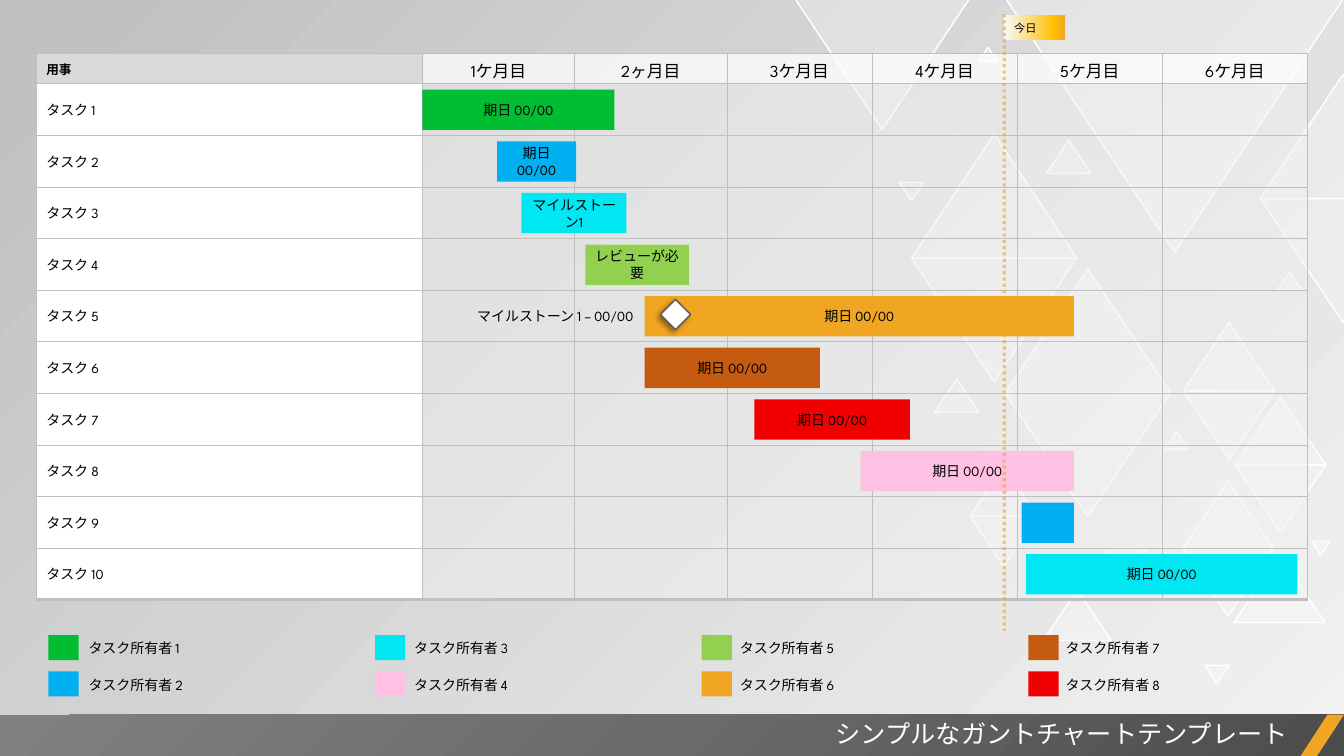
from pptx import Presentation
from pptx.dml.color import RGBColor
from pptx.enum.dml import MSO_LINE
from pptx.enum.shapes import MSO_CONNECTOR, MSO_SHAPE as Preset
from pptx.enum.text import MSO_ANCHOR as Anchor, PP_ALIGN as Align
from pptx.oxml import parse_xml
from pptx.oxml.ns import nsdecls, qn
from pptx.util import Inches, Pt

WIDTH, HEIGHT = 13.33, 7.5
FONT = "League Spartan"
GRID = "BFBFBF"
TABLE_LEFT, TABLE_TOP = 0.36, 0.53
HEADER_HEIGHT, ROW_HEIGHT = 0.3, 0.512
COLUMNS = [3.83] + [1.51] * 2 + [1.44] * 4
HEADINGS = ["用事", "1ケ月目", "2ヶ月目", "3ケ月目", "4ケ月目", "5ケ月目", "6ケ月目"]
TASK_COUNT = 10
BAR_HEIGHT = 0.4
FOOTER_TOP = 7.09
DUE = "期日 00/00"

GREEN, BLUE, CYAN, PINK = "00BD32", "00B0F0", "00E7F2", "FFC0E3"
LIME, ORANGE, BROWN, RED = "92D050", "F0A622", "C55A11", "F10002"
OWNERS = [GREEN, BLUE, CYAN, PINK, LIME, ORANGE, BROWN, RED]

BARS = [
    (0, 1.26, GREEN, DUE),
    (0.49, 1.01, BLUE, DUE),
    (0.65, 1.34, CYAN, "マイルストーン1"),
    (1.07, 1.75, LIME, "レビューが必要"),
    (1.46, 4.39, ORANGE, DUE),
    (1.46, 2.64, BROWN, DUE),
    (2.19, 3.26, RED, DUE),
    (2.92, 4.39, PINK, DUE),
    (4.03, 4.39, BLUE, ""),
    (4.06, 5.93, CYAN, DUE),
]

UP, DOWN = 0, 180
TRIANGLES = [
    (9.04, 1.33, 1.64, UP), (9.04, 2.56, 1.64, DOWN),
    (9.97, 2.67, 1.64, UP), (9.97, 3.9, 1.64, DOWN),
    (9.97, -0.02, 3.36, DOWN),
    (12.24, 5.5, 0.9, UP), (11.73, 5.44, 0.9, DOWN),
    (11.73, 4.77, 0.9, UP), (11.74, 3.2, 0.9, UP),
    (11.74, 3.88, 0.9, DOWN), (12.25, 3.94, 0.9, UP),
    (12.25, 4.61, 0.9, DOWN), (10.35, 5.85, 0.67, UP),
    (9.62, 5.12, 0.67, DOWN), (9.62, 4.62, 0.67, UP),
    (12.5, 0.74, 1.64, UP), (12.5, 1.97, 1.64, DOWN),
    (10.94, 5.44, 0.44, DOWN), (9.27, 3.76, 0.44, UP),
    (11.55, 4.28, 0.24, UP), (11.95, 6.6, 0.24, DOWN),
    (8.92, 1.81, 0.24, DOWN), (12.67, 2.7, 0.24, UP),
    (9.71, 0.47, 0.18, UP), (13.01, 5.37, 0.18, DOWN),
    (10.38, 1.39, 0.44, UP), (7.88, -0.02, 1.74, DOWN),
]


def rgb(color):
    return RGBColor.from_string(color)


def color_xml(color, opacity=100):
    return f'<a:srgbClr {nsdecls("a")} val="{color}"><a:alpha val="{opacity * 1000}"/></a:srgbClr>'


def paint(fill, color, opacity=100):
    fill.solid()
    fill.fore_color.rgb = rgb(color)
    if opacity < 100:
        solid = fill._xPr.find(qn("a:solidFill"))
        solid.replace(solid[0], parse_xml(color_xml(color, opacity)))


def paint_gradient(fill, stops, direction):
    fill.gradient()
    old = fill._xPr.find(qn("a:gradFill"))
    stop_list = "".join(
        f'<a:gs pos="{position * 1000}">{color_xml(color, opacity)}</a:gs>'
        for position, color, opacity in stops)
    new = parse_xml(f'<a:gradFill {nsdecls("a")} rotWithShape="1">'
                    f'<a:gsLst>{stop_list}</a:gsLst>{direction}</a:gradFill>')
    old.getparent().replace(old, new)


def write(frame, text, size, color="000000", align=Align.LEFT, anchor=Anchor.MIDDLE, bold=False):
    frame.word_wrap = True
    frame.vertical_anchor = anchor
    paragraph = frame.paragraphs[0]
    paragraph.text = text
    paragraph.alignment = align
    paragraph.font.name = FONT
    paragraph.font.size = Pt(size)
    paragraph.font.bold = bold
    paragraph.font.color.rgb = rgb(color)


def add_preset(slide, preset, left, top, width, height, color, opacity=100, outline=None):
    shape = slide.shapes.add_shape(preset, Inches(left), Inches(top), Inches(width), Inches(height))
    shape.shadow.inherit = False
    paint(shape.fill, color, opacity)
    if outline:
        shape.line.color.rgb = rgb(outline)
        shape.line.width = Pt(1)
    else:
        shape.line.fill.background()
    return shape


def add_text(slide, left, top, width, height, text, size, **style):
    box = slide.shapes.add_textbox(Inches(left), Inches(top), Inches(width), Inches(height))
    write(box.text_frame, text, size, **style)


def month_x(month):
    whole = int(month)
    return TABLE_LEFT + sum(COLUMNS[:whole + 1]) + (month - whole) * COLUMNS[whole + 1]


def bar_top(row):
    return TABLE_TOP + HEADER_HEIGHT + 0.06 + row * ROW_HEIGHT


def add_backdrop(slide):
    paint_gradient(slide.background.fill, [(0, "F2F2F2", 40), (100, GRID, 100)],
                   '<a:lin ang="13500000" scaled="0"/>')
    for left, top, width, rotation in TRIANGLES:
        triangle = add_preset(slide, Preset.ISOSCELES_TRIANGLE, left, top, width, width * 0.75,
                              "FFFFFF", 30, "FFFFFF")
        triangle.rotation = rotation


def add_footer(slide):
    height = HEIGHT - FOOTER_TOP
    footer = add_preset(slide, Preset.RECTANGLE, 0, FOOTER_TOP, WIDTH, height, "6B6B6B")
    paint_gradient(footer.fill, [(0, "4C4C4C", 100), (50, "6B6B6B", 100), (100, "808080", 100)],
                   '<a:path path="circle"><a:fillToRect l="100000" t="100000"/></a:path>')
    accent = add_preset(slide, Preset.PARALLELOGRAM, 12.9, FOOTER_TOP, 0.43, height, ORANGE)
    accent.adjustments[0] = 0.65
    add_text(slide, 5.25, 7.08, 7.62, 0.4, "シンプルなガントチャートテンプレート", 18,
             color="FFFFFF", align=Align.RIGHT, anchor=Anchor.TOP)


def style_cell(cell, color, opacity, bottom_width):
    properties = cell._tc.get_or_add_tcPr()
    for side, width in (("L", 0.5), ("R", 0.5), ("T", 0.5), ("B", bottom_width)):
        properties.append(parse_xml(
            f'<a:ln{side} {nsdecls("a")} w="{Pt(width)}"><a:solidFill>{color_xml(GRID)}'
            f'</a:solidFill></a:ln{side}>'))
    paint(cell.fill, color, opacity)


def add_schedule(slide):
    frame = slide.shapes.add_table(TASK_COUNT + 1, len(COLUMNS), Inches(TABLE_LEFT), Inches(TABLE_TOP),
                                   Inches(sum(COLUMNS)), Inches(HEADER_HEIGHT + TASK_COUNT * ROW_HEIGHT))
    table = frame.table
    table.first_row = table.horz_banding = False
    for column, width in zip(table.columns, COLUMNS):
        column.width = Inches(width)
    for index, row in enumerate(table.rows):
        row.height = Inches(ROW_HEIGHT if index else HEADER_HEIGHT)
        bottom_width = 3 if index == TASK_COUNT else 0.5
        for position, cell in enumerate(row.cells):
            if position:
                color, opacity = ("F2F2F2", 50) if index else ("FFFFFF", 75)
            else:
                color, opacity = ("FFFFFF" if index else "D9D9D9"), 100
            style_cell(cell, color, opacity, bottom_width)
        if index:
            table.cell(index, 0).vertical_anchor = Anchor.MIDDLE
            write(table.cell(index, 0).text_frame, f"タスク {index}", 10)
    for position, heading in enumerate(HEADINGS):
        cell = table.cell(0, position)
        cell.vertical_anchor = Anchor.MIDDLE
        write(cell.text_frame, heading, 12 if position else 9, bold=position == 0,
              align=Align.CENTER if position else Align.LEFT)


def add_bars(slide):
    for row, (start, end, color, label) in enumerate(BARS):
        left = month_x(start)
        bar = add_preset(slide, Preset.RECTANGLE, left, bar_top(row), month_x(end) - left, BAR_HEIGHT, color)
        if label:
            write(bar.text_frame, label, 10, align=Align.CENTER)


def add_legend(slide):
    for index, color in enumerate(OWNERS):
        column, row = divmod(index, 2)
        top = 6.3 + row * 0.36
        add_preset(slide, Preset.RECTANGLE, 0.48 + column * 3.24, top, 0.3, 0.25, color)
        add_text(slide, 0.78 + column * 3.23, top, 2.4, 0.27, f"タスク所有者 {index + 1}", 10,
                 anchor=Anchor.TOP)


def add_today(slide):
    x = 9.96
    flag = add_preset(slide, Preset.RECTANGLE, x, 0.15, 0.6, 0.25, ORANGE)
    paint_gradient(flag.fill, [(0, "F7FAFD", 100), (83, "FFC000", 100), (100, ORANGE, 100)],
                   '<a:lin ang="0" scaled="0"/>')
    write(flag.text_frame, "今日", 8)
    marker = slide.shapes.add_connector(MSO_CONNECTOR.STRAIGHT, Inches(x), Inches(0.14), Inches(x), Inches(6.26))
    paint(marker.line.fill, ORANGE, 60)
    marker.line.width = Pt(2.25)
    marker.line.dash_style = MSO_LINE.ROUND_DOT
    marker._element.spPr.append(parse_xml(f'<a:effectLst {nsdecls("a")}/>'))


def add_milestone(slide):
    diamond = add_preset(slide, Preset.DIAMOND, 6.55, 2.97, 0.3, 0.3, "FFFFFF", outline="595959")
    diamond._element.spPr.find(qn("a:effectLst")).append(parse_xml(
        f'<a:outerShdw {nsdecls("a")} blurRad="{Pt(4)}" dist="{Pt(3)}" dir="8100000">'
        f'{color_xml("000000", 40)}</a:outerShdw>'))
    add_text(slide, 4.21, bar_top(4), 2.17, BAR_HEIGHT, "マイルストーン 1 – 00/00", 10, align=Align.RIGHT)


def main():
    presentation = Presentation()
    presentation.slide_width, presentation.slide_height = Inches(WIDTH), Inches(HEIGHT)
    slide = presentation.slides.add_slide(presentation.slide_layouts[6])
    for add_part in (add_backdrop, add_footer, add_schedule, add_bars, add_legend, add_today, add_milestone):
        add_part(slide)
    presentation.save("out.pptx")


if __name__ == "__main__":
    main()
